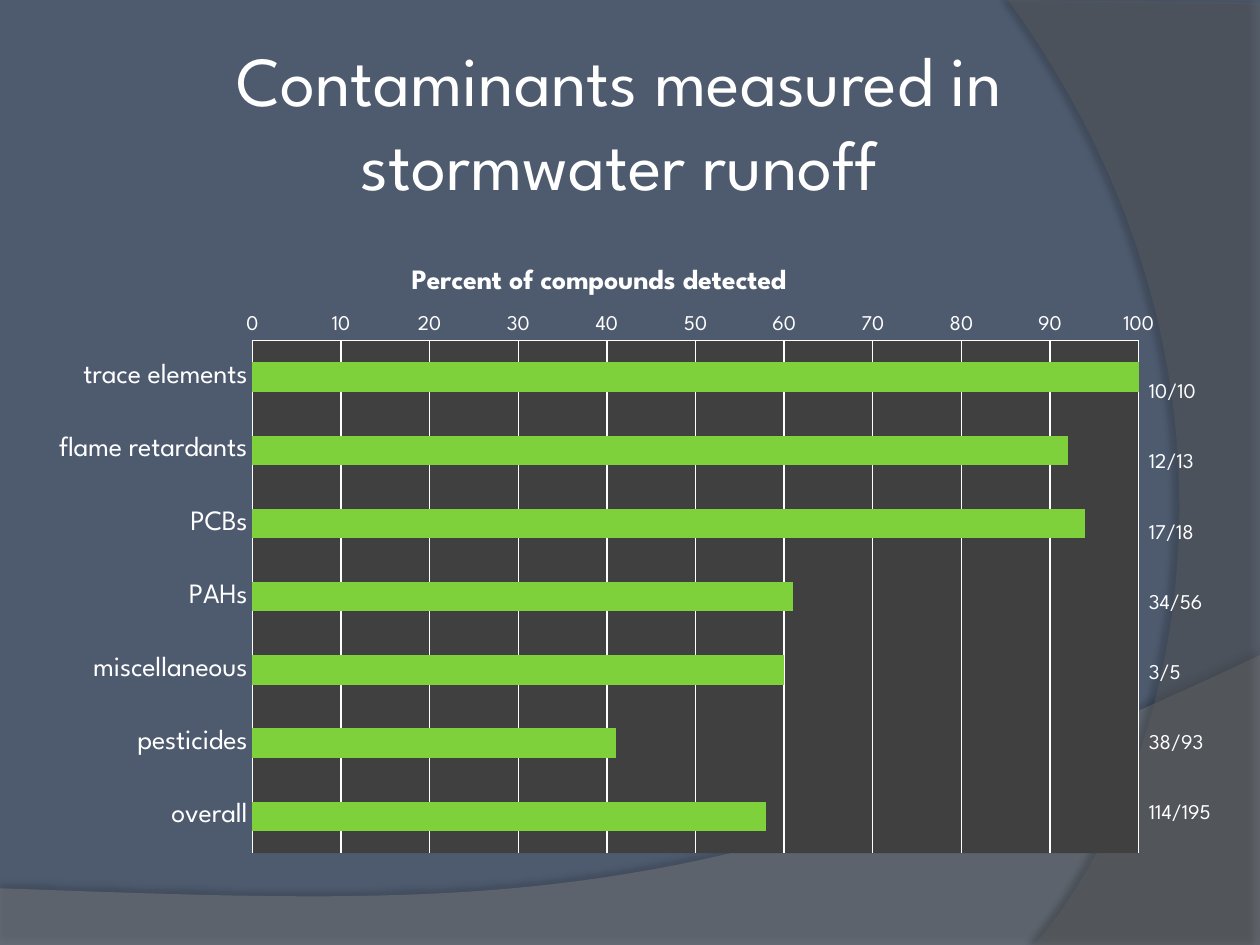
"""Build a slide with a bar chart of contaminants detected in stormwater runoff."""
from lxml.etree import SubElement
from pptx import Presentation
from pptx.chart.data import CategoryChartData
from pptx.dml.color import RGBColor
from pptx.enum.chart import XL_CHART_TYPE, XL_TICK_MARK
from pptx.enum.text import MSO_ANCHOR, PP_ALIGN
from pptx.oxml import parse_xml
from pptx.oxml.ns import nsdecls, qn
from pptx.util import Inches, Pt

THEME = {
    "font": "League Spartan",
    "background": "4E5B6F", "text": "FFFFFF", "bar": "7FD13B", "plot": "404040",
    "wave": "7F7F7F", "arc": "5E5E5E", "shadow": "000000",
    "title": 40, "heading": 16, "category": 16, "small": 12,
}
TITLE = "Contaminants measured in stormwater runoff"
CHART_TITLE = "Percent of compounds detected"
DETECTIONS = [
    ("trace elements", 10, 10),
    ("flame retardants", 12, 13),
    ("PCBs", 17, 18),
    ("PAHs", 34, 56),
    ("miscellaneous", 3, 5),
    ("pesticides", 38, 93),
    ("overall", 114, 195),
]
CHART_BOX = (0.17, 1.92, 9.17, 4.95)
PLOT_BOX = (2, 2.7, 7.03, 4.07)
COUNT_LEFT, COUNT_WIDTH, COUNT_HEIGHT = 9.02, 0.9, 0.3
COUNT_FIRST, COUNT_LAST = 2.95, 6.29
BACKDROP = [
    {"curve": [(10, 5.2), (5.59, 7.29), (3.91, 7.19), (0, 7.05)],
     "corners": [(0, 7.5), (10, 7.5)],
     "color": "wave", "opacity": 45, "shade": 35, "distance": 3.5, "angle": 270},
    {"curve": [(8.21, 7.5), (9.35, 6.19), (10.18, 3), (8, 0)],
     "corners": [(10, 0.02), (10, 7.5)],
     "color": "arc", "opacity": 40, "shade": 45, "distance": 4, "angle": 180},
]
CURVE_STEPS = 48


def color(name):
    return RGBColor.from_string(THEME[name])


def style_font(font, size, bold=False):
    font.name, font.size, font.bold = THEME["font"], Pt(THEME[size]), bold
    font.color.rgb = color("text")


def bezier(controls, t):
    weights = ((1 - t) ** 3, 3 * t * (1 - t) ** 2, 3 * t * t * (1 - t), t ** 3)
    return tuple(sum(w * point[axis] for w, point in zip(weights, controls)) for axis in (0, 1))


def add_backdrop(page, item):
    curve = [bezier(item["curve"], step / CURVE_STEPS) for step in range(CURVE_STEPS + 1)]
    points = [(Inches(x), Inches(y)) for x, y in curve + item["corners"]]
    builder = page.shapes.build_freeform(*points[0], scale=1.0)
    builder.add_line_segments(points[1:], close=True)
    shape = builder.convert_to_shape()
    shape.fill.solid()
    shape.fill.fore_color.rgb = color(item["color"])
    shape.line.fill.background()
    shape.shadow.inherit = False
    properties = shape.element.spPr
    tint = properties.find(qn("a:solidFill")).find(qn("a:srgbClr"))
    SubElement(tint, qn("a:alpha"), val=str(item["opacity"] * 1000))
    shadow = SubElement(
        properties.find(qn("a:effectLst")), qn("a:outerShdw"),
        blurRad=str(Pt(4)), dist=str(Pt(item["distance"])),
        dir=str(item["angle"] * 60000), algn="ctr", rotWithShape="0")
    shade = SubElement(shadow, qn("a:srgbClr"), val=THEME["shadow"])
    SubElement(shade, qn("a:alpha"), val=str(item["shade"] * 1000))


def add_text(page, text, bounds, size):
    box = page.shapes.add_textbox(*map(Inches, bounds))
    frame = box.text_frame
    frame.word_wrap = True
    span = frame.paragraphs[0].add_run()
    span.text = text
    style_font(span.font, size)
    return frame


def add_title(page):
    frame = add_text(page, TITLE, (0.5, 0.33, 8.83, 1.25), "title")
    frame.vertical_anchor = MSO_ANCHOR.MIDDLE
    frame.margin_left = frame.margin_right = Inches(0.05)
    frame.paragraphs[0].alignment = PP_ALIGN.CENTER


def fix_plot_area(chart):
    left, top, width, height = CHART_BOX
    x, y, plot_width, plot_height = PLOT_BOX
    shares = {"x": (x - left) / width, "y": (y - top) / height,
              "w": plot_width / width, "h": plot_height / height}
    values = "".join(f'<c:{key} val="{share:.3f}"/>' for key, share in shares.items())
    layout = parse_xml(
        f'<c:layout {nsdecls("c")}><c:manualLayout><c:layoutTarget val="inner"/>'
        f'<c:xMode val="edge"/><c:yMode val="edge"/>{values}</c:manualLayout></c:layout>')
    area = chart.element.chart.plotArea
    for previous in area.findall(qn("c:layout")):
        area.remove(previous)
    area.insert(0, layout)
    area.append(parse_xml(
        f'<c:spPr {nsdecls("c", "a")}><a:solidFill><a:srgbClr val="{THEME["plot"]}"/>'
        '</a:solidFill><a:ln><a:noFill/></a:ln></c:spPr>'))


def add_detection_chart(page):
    data = CategoryChartData(number_format="0")
    data.categories = [name for name, _, _ in DETECTIONS]
    data.add_series("Series 1", [round(100 * found / total) for _, found, total in DETECTIONS])
    chart = page.shapes.add_chart(
        XL_CHART_TYPE.BAR_CLUSTERED, *map(Inches, CHART_BOX), data).chart
    style_font(chart.font, "small")
    chart.has_legend = False
    chart.has_title = True
    span = chart.chart_title.text_frame.paragraphs[0].add_run()
    span.text = CHART_TITLE
    style_font(span.font, "heading", bold=True)
    chart.chart_title.include_in_layout = False

    plot = chart.plots[0]
    plot.gap_width, plot.vary_by_categories = 150, False
    bars = plot.series[0].format.fill
    bars.solid()
    bars.fore_color.rgb = color("bar")

    names, scale = chart.category_axis, chart.value_axis
    names.reverse_order = True
    scale.minimum_scale, scale.maximum_scale, scale.major_unit = 0, 100, 10
    scale.has_major_gridlines = True
    scale.tick_labels.number_format = "0"
    scale.tick_labels.number_format_is_linked = False
    for axis, size in ((names, "category"), (scale, "small")):
        axis.major_tick_mark = axis.minor_tick_mark = XL_TICK_MARK.NONE
        style_font(axis.tick_labels.font, size)
    for line in (names.format.line, scale.format.line, scale.major_gridlines.format.line):
        line.color.rgb = color("text")
        line.width = Pt(0.75)
    fix_plot_area(chart)


def add_counts(page):
    step = (COUNT_LAST - COUNT_FIRST) / (len(DETECTIONS) - 1)
    for row, (_, found, total) in enumerate(DETECTIONS):
        bounds = (COUNT_LEFT, COUNT_FIRST + row * step, COUNT_WIDTH, COUNT_HEIGHT)
        add_text(page, f"{found}/{total}", bounds, "small")


def main():
    deck = Presentation()
    deck.slide_width, deck.slide_height = Inches(10), Inches(7.5)
    page = deck.slides.add_slide(deck.slide_layouts[6])
    page.background.fill.solid()
    page.background.fill.fore_color.rgb = color("background")
    for item in BACKDROP:
        add_backdrop(page, item)
    add_title(page)
    add_detection_chart(page)
    add_counts(page)
    deck.save("out.pptx")


if __name__ == "__main__":
    main()
